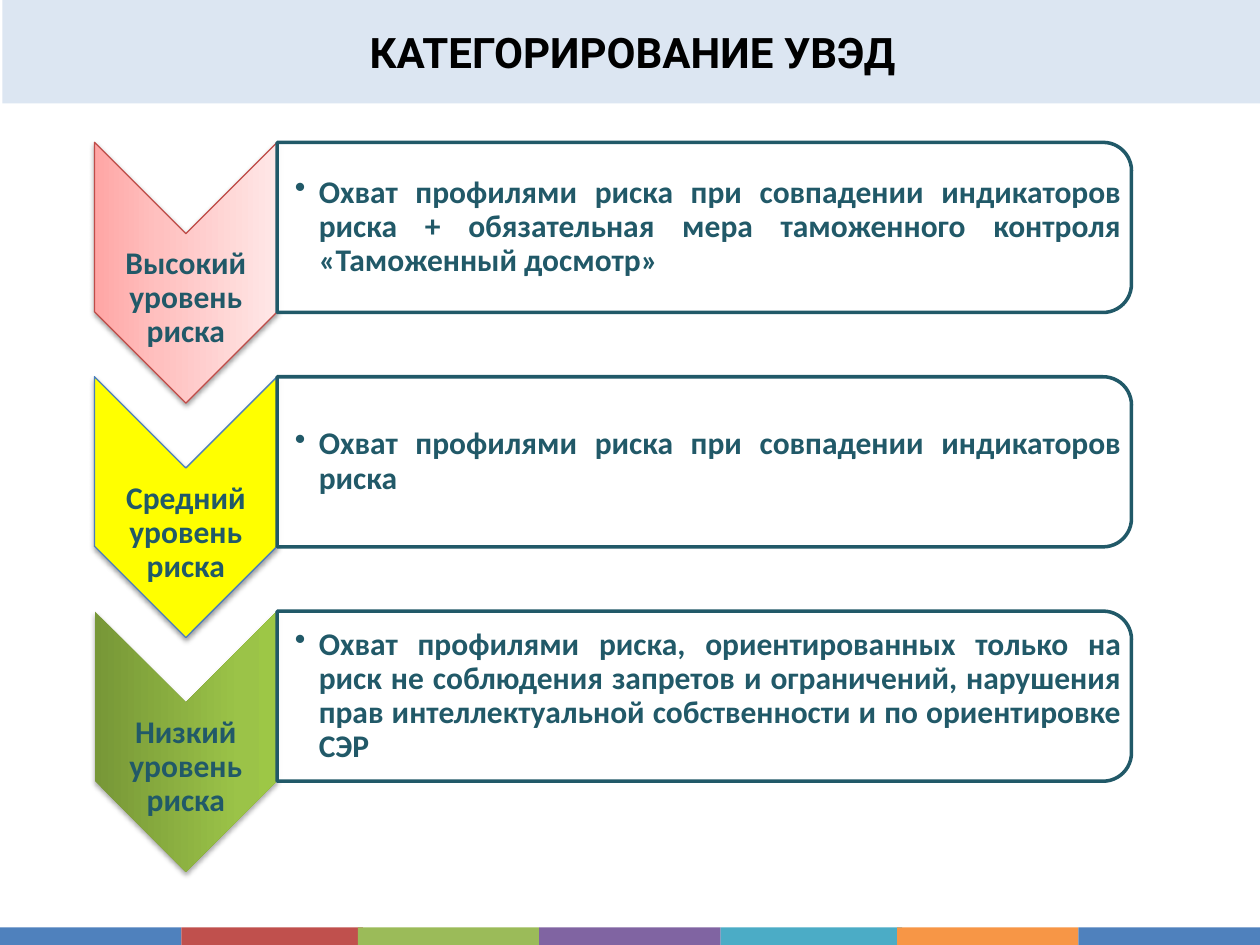
from lxml.etree import SubElement as Sub
from pptx import Presentation
from pptx.dml.color import RGBColor
from pptx.enum.shapes import MSO_SHAPE as Shape
from pptx.enum.text import MSO_ANCHOR as Anchor, PP_ALIGN as Align
from pptx.oxml.ns import qn
from pptx.util import Inches, Pt

TEAL = "215968"
STRIPES = ["4F81BD", "C0504D", "9BBB59", "8064A2", "4BACC6", "F79646", "4F81BD"]
LEVELS = [
    ("Высокий уровень риска",
     "Охват профилями риска при совпадении индикаторов риска + обязательная "
     "мера таможенного контроля «Таможенный досмотр»",
     [(0, "FFA6A5"), (35, "FFC0BF"), (100, "FFE7E7")], "BF4C48", (38, 1.6)),
    ("Средний уровень риска",
     "Охват профилями риска при совпадении индикаторов риска",
     "FFFF00", "4B7EBC", (38, 1.6)),
    ("Низкий уровень риска",
     "Охват профилями риска, ориентированных только на риск не соблюдения "
     "запретов и ограничений, нарушения прав интеллектуальной собственности "
     "и по ориентировке СЭР",
     [(0, "779737"), (80, "9BC348"), (100, "9DC746")], None, (35, 1.8)),
]


def paint(fill, tone):
    """Give a fill or font colour a solid hex tone."""
    fill.solid()
    fill.fore_color.rgb = RGBColor.from_string(tone)


def blend(shape, stops):
    """Fill a shape with a gradient running along its own upward axis."""
    shape.fill.gradient()
    shape.fill.gradient_angle = 90
    track = shape._element.spPr.find(qn("a:gradFill")).find(qn("a:gsLst"))
    for stop in list(track):
        track.remove(stop)
    for pos, tone in stops:
        stop = Sub(track, qn("a:gs"), pos=str(pos * 1000))
        Sub(stop, qn("a:srgbClr"), val=tone)


def shade(shape, alpha, dist):
    """Add a soft shadow below a shape."""
    effects = shape._element.spPr.find(qn("a:effectLst"))
    drop = Sub(effects, qn("a:outerShdw"), blurRad=str(Pt(3.1)), dist=str(Pt(dist)),
               dir="5400000", rotWithShape="0")
    tone = Sub(drop, qn("a:srgbClr"), val="000000")
    Sub(tone, qn("a:alpha"), val=str(alpha * 1000))


def block(slide, kind, x, y, w, h, fill, line=None, width=0.75, turn=False):
    """Draw a preset shape that covers the box, turned a quarter if asked."""
    if turn:
        x, y, w, h = x + (w - h) / 2, y + (h - w) / 2, h, w
    shape = slide.shapes.add_shape(kind, Inches(x), Inches(y), Inches(w), Inches(h))
    shape.rotation = 90 if turn else 0
    shape.shadow.inherit = False
    if isinstance(fill, list):
        blend(shape, fill)
    else:
        paint(shape.fill, fill)
    if line:
        paint(shape.line.fill, line)
        shape.line.width = Pt(width)
    else:
        shape.line.fill.background()
    return shape


def write(frame, text, size=18, font="Calibri", tone=TEAL, align=Align.CENTER,
          space=1.0, bullet=False, pads=None):
    """Set one formatted paragraph in a text frame."""
    frame.word_wrap = True
    frame.vertical_anchor = Anchor.MIDDLE
    if pads:
        (frame.margin_left, frame.margin_top,
         frame.margin_right, frame.margin_bottom) = map(Inches, pads)
    para = frame.paragraphs[0]
    para.alignment, para.line_spacing = align, space
    run = para.add_run()
    run.text = text
    run.font.size, run.font.name, run.font.bold = Pt(size), font, True
    paint(run.font.fill, tone)
    if bullet:
        props = para._p.get_or_add_pPr()
        props.set("marL", str(Inches(0.19)))
        props.set("indent", str(-Inches(0.19)))
        Sub(props, qn("a:buChar"), char="•")


def label(slide, text, x, y, w, h, **form):
    """Place a text box in the given box."""
    box = slide.shapes.add_textbox(Inches(x), Inches(y), Inches(w), Inches(h))
    write(box.text_frame, text, space=0.9, **form)


def footer(slide, x, y, h):
    """Draw the strip of coloured bars."""
    for i, tone in enumerate(STRIPES):
        left = x + i // 3 * 4.28 + (0, 1.44, 2.84)[i % 3]
        block(slide, Shape.RECTANGLE, left, y, 1.44, h, tone)


def level(slide, x, y, w, h, name, note, fill, line, shadow):
    """Draw one risk level: a chevron with its name and a card with its note."""
    arrow, card = 1.45, 1.35
    mark = block(slide, Shape.CHEVRON, x, y, arrow, h, fill, line, turn=True)
    shade(mark, *shadow)
    label(slide, name, x, y + 0.72, arrow, h - 1.03, pads=[0.01] * 4)
    panel = block(slide, Shape.ROUND_2_SAME_RECTANGLE, x + arrow, y, w - arrow, card,
                  "FFFFFF", TEAL, 2, turn=True)
    tone = panel._element.spPr.find(qn("a:solidFill")).find(qn("a:srgbClr"))
    Sub(tone, qn("a:alpha"), val="90000")
    label(slide, note, x + arrow, y + 0.07, w - arrow - 0.07, card - 0.14,
          align=Align.JUSTIFY, bullet=True, pads=[0.14, 0.01, 0.01, 0.01])


def header(slide, x, y, w, h):
    """Draw the title band."""
    band = block(slide, Shape.RECTANGLE, x, y, w, h, "DCE6F2")
    write(band.text_frame, "КАТЕГОРИРОВАНИЕ УВЭД", size=24, font="Roboto", tone="000000")


def main():
    """Build and save the slide."""
    deck = Presentation()
    deck.slide_width, deck.slide_height = Inches(10), Inches(7.5)
    slide = deck.slides.add_slide(deck.slide_layouts[6])
    footer(slide, 0, 7.36, 0.14)
    for i, row in enumerate(LEVELS):
        level(slide, 0.75, 1.13 + i * 1.86, 8.23, 2.07, *row)
    header(slide, 0.02, 0, 10, 0.82)
    deck.save("out.pptx")


if __name__ == "__main__":
    main()
